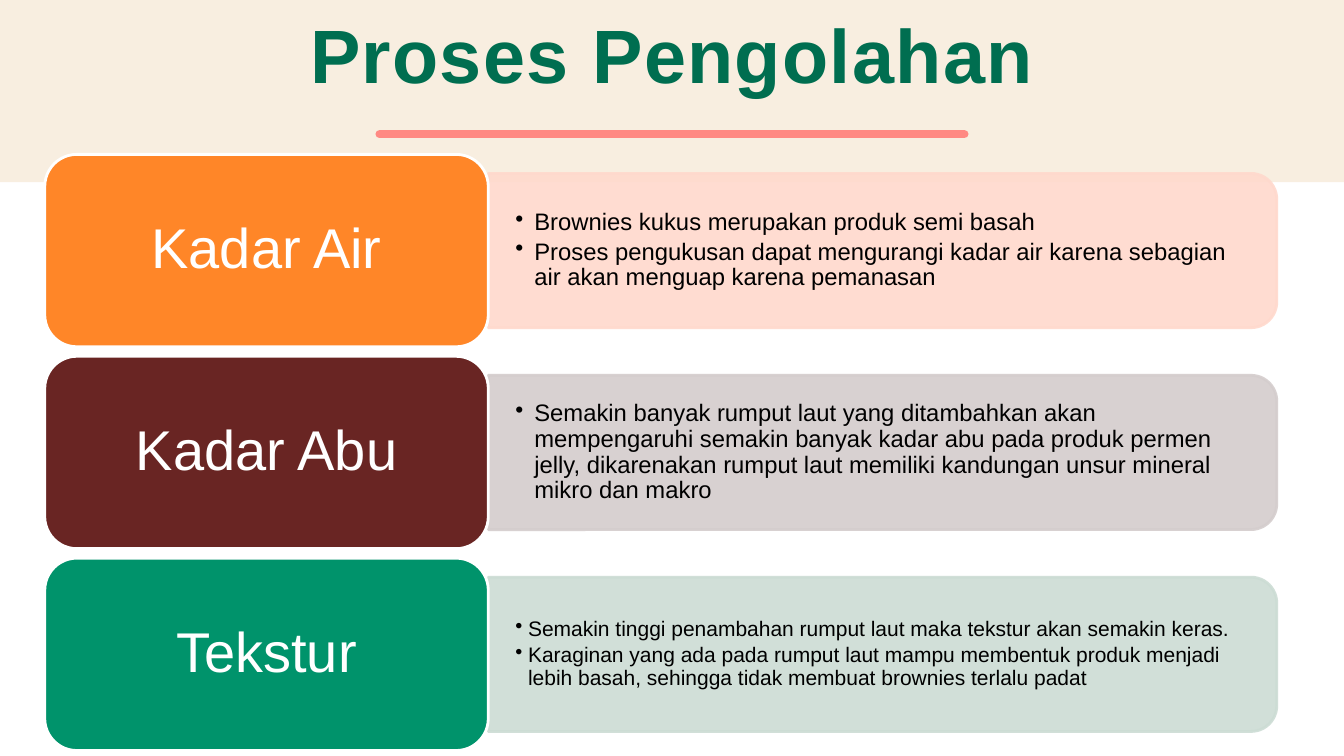
from dataclasses import dataclass

from lxml import etree
from pptx import Presentation
from pptx.dml.color import RGBColor
from pptx.enum.shapes import MSO_CONNECTOR, MSO_SHAPE
from pptx.enum.text import MSO_ANCHOR, PP_ALIGN
from pptx.oxml.ns import qn
from pptx.util import Pt

RECT = MSO_SHAPE.RECTANGLE
ROUNDED = MSO_SHAPE.ROUNDED_RECTANGLE
TWO_ROUNDED = MSO_SHAPE.ROUND_2_SAME_RECTANGLE
STRAIGHT = MSO_CONNECTOR.STRAIGHT
CENTER, LEFT = PP_ALIGN.CENTER, PP_ALIGN.LEFT
MIDDLE = MSO_ANCHOR.MIDDLE


@dataclass(frozen=True)
class Theme:
    font: str = "Arial"
    band: str = "F8EEE0"
    title: str = "006E50"
    rule: str = "FF8983"
    light: str = "FFFFFF"
    dark: str = "000000"
    title_size: float = 54
    label_size: float = 40
    border: float = 2
    opacity: int = 90


THEME = Theme()

# label, label colour, detail colour, detail size, bullet indent, points
TOPICS = [
    ("Kadar Air", "FF8628", "FFD9CD", 17, 13.5, [
        "Brownies kukus merupakan produk semi basah",
        "Proses pengukusan dapat mengurangi kadar air karena sebagian "
        "air akan menguap karena pemanasan"]),
    ("Kadar Abu", "692523", "D4CDCD", 17, 13.5, [
        "Semakin banyak rumput laut yang ditambahkan akan mempengaruhi "
        "semakin banyak kadar abu pada produk permen jelly, dikarenakan "
        "rumput laut memiliki kandungan unsur mineral mikro dan makro"]),
    ("Tekstur", "00936B", "CCDCD4", 15, 9, [
        "Semakin tinggi penambahan rumput laut maka tekstur akan semakin keras.",
        "Karaginan yang ada pada rumput laut mampu membentuk produk menjadi "
        "lebih basah, sehingga tidak membuat brownies terlalu padat"]),
]


def add_block(slide, kind, left, top, width, height, fill, border=None):
    block = slide.shapes.add_shape(kind, Pt(left), Pt(top), Pt(width), Pt(height))
    block.shadow.inherit = False
    block.fill.solid()
    block.fill.fore_color.rgb = RGBColor.from_string(fill)
    if border:
        block.line.color.rgb = RGBColor.from_string(border)
        block.line.width = Pt(THEME.border)
    else:
        block.line.fill.background()
    return block


def set_frame(frame, side, end):
    frame.word_wrap = True
    frame.vertical_anchor = MIDDLE
    frame.margin_left = frame.margin_right = Pt(side)
    frame.margin_top = frame.margin_bottom = Pt(end)


def style(paragraph, size, color, align, spacing, after):
    paragraph.alignment = align
    paragraph.line_spacing = spacing
    paragraph.space_after = Pt(after)
    font = paragraph.runs[0].font
    font.name, font.size = THEME.font, Pt(size)
    font.color.rgb = RGBColor.from_string(color)
    return font


def add_header(slide, left, top, width, height):
    # Background band
    add_block(slide, RECT, left, top, width, height, THEME.band)

    # Rounded rule under the title
    middle, rule_width, rule_y = left + width / 2, 417.6, top + 95.9
    rule = slide.shapes.add_connector(
        STRAIGHT, Pt(middle - rule_width / 2), Pt(rule_y),
        Pt(middle + rule_width / 2), Pt(rule_y))
    rule.line.color.rgb = RGBColor.from_string(THEME.rule)
    rule.line.width = Pt(6)
    rule.line._get_or_add_ln().set("cap", "rnd")
    etree.SubElement(rule._element.spPr, qn("a:effectLst"))

    # Title
    title = slide.shapes.add_textbox(Pt(left + 48), Pt(top + 5.8), Pt(width - 96), Pt(74.2))
    frame = title.text_frame
    set_frame(frame, 9.4, 5)
    frame.text = "Proses Pengolahan"
    font = style(frame.paragraphs[0], THEME.title_size, THEME.title, CENTER, 0.85, 6)
    font.bold = True
    frame.paragraphs[0].runs[0]._r.get_or_add_rPr().set("spc", "100")


def add_topic(slide, left, top, width, height, topic):
    label, label_color, detail_color, size, indent, points = topic
    label_width, panel_height = 316.8, 110.2
    panel_left, panel_width = left + label_width, width - label_width
    middle_y = top + height / 2

    # Detail panel, turned so that its rounded corners face right
    panel = add_block(
        slide, TWO_ROUNDED, panel_left + (panel_width - panel_height) / 2,
        middle_y - panel_width / 2, panel_height, panel_width, detail_color, detail_color)
    panel.rotation = 90
    for color in panel._element.spPr.iter(qn("a:srgbClr")):
        etree.SubElement(color, qn("a:alpha"), val=str(THEME.opacity * 1000))

    # Bulleted details
    text_height = 99.4
    details = slide.shapes.add_textbox(
        Pt(panel_left), Pt(middle_y - text_height / 2), Pt(panel_width - 5), Pt(text_height))
    frame = details.text_frame
    set_frame(frame, 19.4, 9.8)
    frame.text = "\n".join(points)
    for paragraph in frame.paragraphs:
        paragraph.level = 1
        style(paragraph, size, THEME.dark, LEFT, 0.9, size * 0.15)
        properties = paragraph._p.get_or_add_pPr()
        properties.set("marL", str(Pt(indent)))
        properties.set("indent", str(-Pt(indent)))
        etree.SubElement(properties, qn("a:buChar"), char="•")

    # Topic label
    name = add_block(slide, ROUNDED, left, top, label_width, height, label_color, THEME.light)
    set_frame(name.text_frame, 12, 6)
    name.text_frame.text = label
    style(name.text_frame.paragraphs[0], THEME.label_size, THEME.light, CENTER, 0.9,
          THEME.label_size * 0.35)


def add_topics(slide, left, top, width, height):
    gap = 6.8
    row_height = (height - gap * (len(TOPICS) - 1)) / len(TOPICS)
    for row, topic in enumerate(TOPICS):
        add_topic(slide, left, top + row * (row_height + gap), width, row_height, topic)


def main():
    deck = Presentation()
    deck.slide_width, deck.slide_height = Pt(960), Pt(540)
    slide = deck.slides.add_slide(deck.slide_layouts[6])
    add_header(slide, 0, 0, 960, 130.2)
    add_topics(slide, 32, 110.3, 880, 425.8)
    deck.save("out.pptx")


if __name__ == "__main__":
    main()
